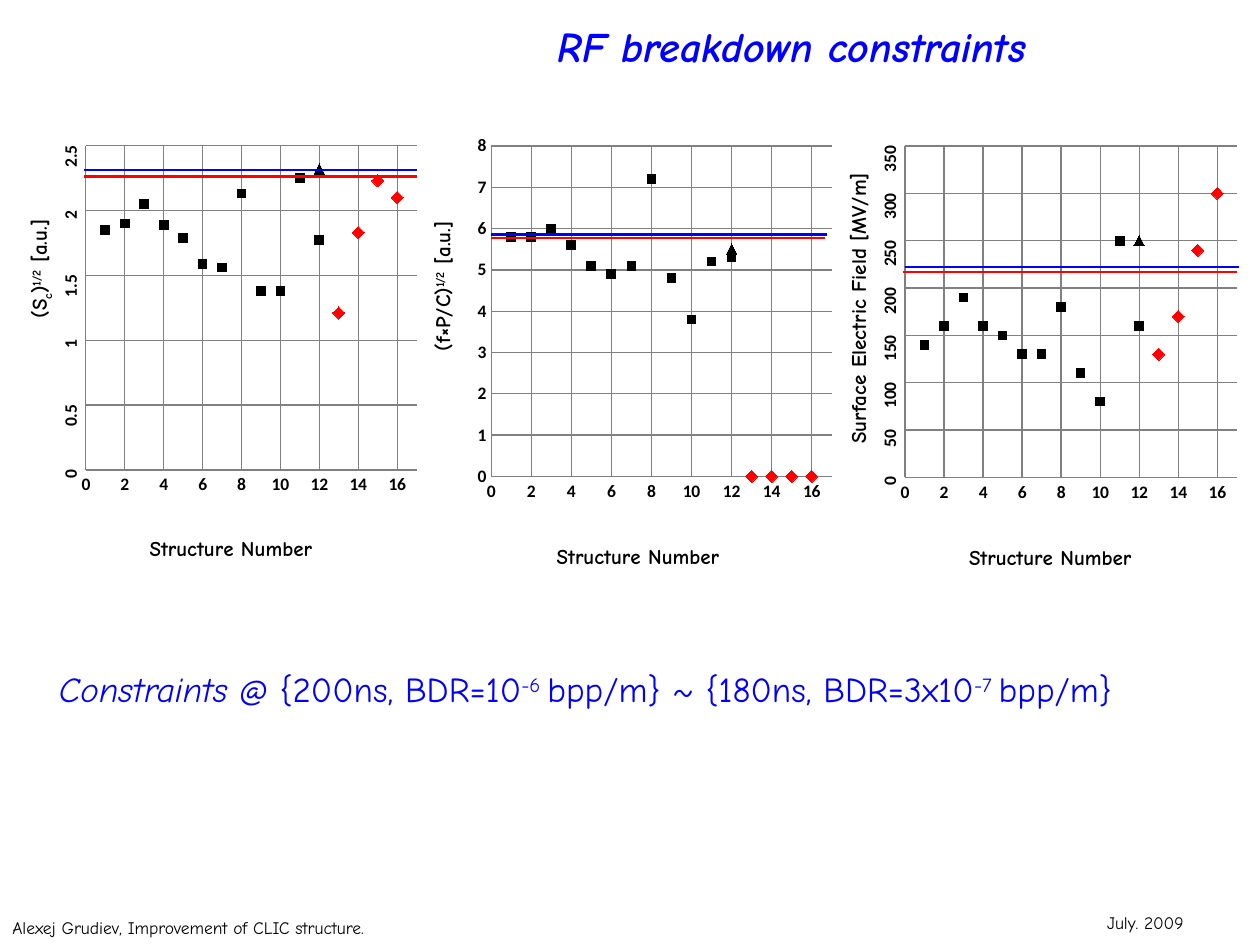
"""Build the slide on RF breakdown constraints with three scatter charts."""
from dataclasses import dataclass

from lxml.etree import SubElement
from pptx import Presentation
from pptx.chart.data import XyChartData
from pptx.dml.color import RGBColor
from pptx.enum.chart import XL_CHART_TYPE, XL_MARKER_STYLE, XL_TICK_MARK
from pptx.enum.shapes import MSO_CONNECTOR
from pptx.enum.text import MSO_ANCHOR, PP_ALIGN
from pptx.oxml import parse_xml
from pptx.oxml.ns import nsdecls, qn
from pptx.util import Inches, Pt


@dataclass(frozen=True)
class Theme:
    blue: RGBColor = RGBColor(0x00, 0x00, 0xFF)
    red: RGBColor = RGBColor(0xFF, 0x00, 0x00)
    black: RGBColor = RGBColor(0x00, 0x00, 0x00)
    grid: RGBColor = RGBColor(0x80, 0x80, 0x80)
    text_font: str = "Comic Neue"
    axis_font: str = "Calibri"
    title_size: int = 24
    body_size: int = 20
    axis_title_size: int = 12
    small_size: int = 10
    limit_width: float = 1.5
    grid_width: float = 0.75


THEME = Theme()
SUPERSCRIPT = 30
SUBSCRIPT = -25
STRUCTURES = [*range(1, 13), 12]
NEW_STRUCTURES = range(13, 17)


@dataclass(frozen=True)
class ScatterPanel:
    box: tuple
    title_runs: tuple
    title_top: float
    maximum: float
    step: float
    rotated_labels: bool
    tested: tuple
    new: tuple
    blue_limit: tuple
    red_limit: tuple


PANELS = (
    ScatterPanel(
        (0.11, 0.96, 3.38, 3.77),
        (("(S", 0), ("c", SUBSCRIPT), (")", 0), ("1/2", SUPERSCRIPT), (" [a.u.]", 0)),
        0.2, 2.5, 0.5, True,
        (1.85, 1.9, 2.05, 1.89, 1.79, 1.59, 1.56, 2.13, 1.38, 1.38, 2.25, 1.77, 2.32),
        (1.21, 1.83, 2.23, 2.1),
        (0.67, 3.31, 1.35), (0.67, 3.31, 1.4),
    ),
    ScatterPanel(
        (3.31, 0.96, 3.48, 3.84),
        (("(f×P/C)", 0), ("1/2", SUPERSCRIPT), (" [a.u.]", 0)),
        0.2, 8, 1, False,
        (5.8, 5.8, 6, 5.6, 5.1, 4.9, 5.1, 7.2, 4.8, 3.8, 5.2, 5.3, 5.5),
        (0, 0, 0, 0),
        (3.9, 6.56, 1.86), (3.9, 6.55, 1.89),
    ),
    ScatterPanel(
        (6.61, 0.96, 3.39, 3.85),
        (("Surface Electric Field [MV/m]", 0),),
        0.1, 350, 50, True,
        (140, 160, 190, 160, 150, 130, 130, 180, 110, 80, 250, 160, 250),
        (130, 170, 240, 300),
        (7.18, 9.83, 2.12), (7.17, 9.82, 2.16),
    ),
)


def style_font(font, size, color, name=THEME.text_font, bold=False, italic=False):
    """Set every visible property of a font."""
    font.name, font.size, font.bold, font.italic = name, Pt(size), bold, italic
    font.color.rgb = color


def add_run(paragraph, text, size, color, baseline=0, bold=False, italic=False):
    """Append one styled run, raised or lowered by a baseline percentage."""
    run = paragraph.add_run()
    run.text = text
    style_font(run.font, size, color, bold=bold, italic=italic)
    if baseline:
        run.font._element.set("baseline", str(baseline * 1000))


def add_text(slide, box, anchor=MSO_ANCHOR.TOP, alignment=PP_ALIGN.LEFT):
    """Add a text box and return its first paragraph."""
    frame = slide.shapes.add_textbox(*map(Inches, box)).text_frame
    frame.word_wrap = True
    frame.vertical_anchor = anchor
    paragraph = frame.paragraphs[0]
    paragraph.alignment = alignment
    return paragraph


def set_layout(parent, position, **values):
    """Give a chart element a manual layout at a position among its siblings."""
    for previous in parent.findall(qn("c:layout")):
        parent.remove(previous)
    layout = parse_xml(f"<c:layout {nsdecls('c')}><c:manualLayout/></c:layout>")
    for tag, value in values.items():
        SubElement(layout[0], qn(f"c:{tag}")).set("val", str(value))
    parent.insert(position, layout)


def style_axis(axis, maximum, step):
    """Set scale, grid, line and tick labels of an axis."""
    axis.minimum_scale, axis.maximum_scale, axis.major_unit = 0, maximum, step
    axis.major_tick_mark = axis.minor_tick_mark = XL_TICK_MARK.NONE
    axis.has_major_gridlines = True
    for line in (axis.format.line, axis.major_gridlines.format.line):
        line.color.rgb = THEME.grid
        line.width = Pt(THEME.grid_width)
    labels = axis.tick_labels
    labels.number_format, labels.number_format_is_linked = "General", False
    style_font(labels.font, THEME.small_size, THEME.black, THEME.axis_font, bold=True)


def add_axis_title(axis, runs, left, top):
    """Write an axis title and place it by chart fractions."""
    frame = axis.axis_title.text_frame
    for text, baseline in runs:
        add_run(frame.paragraphs[0], text, THEME.axis_title_size, THEME.black, baseline, bold=True)
    set_layout(axis.axis_title._element, 1, xMode="edge", yMode="edge", x=left, y=top)
    return frame


def rotate_upward(body):
    """Turn a chart text body to read from bottom to top."""
    properties = body.find(qn("a:bodyPr"))
    properties.set("rot", "-5400000")
    properties.set("vert", "horz")


def style_marker(marker, style, size, color):
    """Set form, size and colour of a marker."""
    marker.style, marker.size = style, size
    marker.format.fill.solid()
    marker.format.fill.fore_color.rgb = color
    marker.format.line.color.rgb = color


def add_scatter(slide, panel):
    """Add one scatter chart with its axes and markers."""
    data = XyChartData()
    for name, numbers, values in (
        ("Series 1", STRUCTURES, panel.tested),
        ("Series 2", NEW_STRUCTURES, panel.new),
    ):
        series = data.add_series(name)
        for number, value in zip(numbers, values):
            series.add_data_point(number, value)
    chart = slide.shapes.add_chart(XL_CHART_TYPE.XY_SCATTER, *map(Inches, panel.box), data).chart
    chart.has_title = chart.has_legend = False
    style_font(chart.font, THEME.small_size, THEME.black)
    plot = chart.plots[0]
    plot.vary_by_categories = False
    set_layout(chart._chartSpace.chart.plotArea, 0, layoutTarget="inner", xMode="edge",
               yMode="edge", x=0.169, y=0.052, w=0.777, h=0.683)
    style_axis(chart.category_axis, 17, 2)
    add_axis_title(chart.category_axis, (("Structure Number", 0),), 0.31, 0.865)
    style_axis(chart.value_axis, panel.maximum, panel.step)
    title_frame = add_axis_title(chart.value_axis, panel.title_runs, 0.02, panel.title_top)
    rotate_upward(title_frame._txBody)
    if panel.rotated_labels:
        rotate_upward(chart.value_axis._element.find(qn("c:txPr")))
    tested, new = plot.series
    style_marker(tested.marker, XL_MARKER_STYLE.SQUARE, 5, THEME.black)
    style_marker(new.marker, XL_MARKER_STYLE.DIAMOND, 7, THEME.red)
    last_point = tested.points[len(STRUCTURES) - 1]
    style_marker(last_point.marker, XL_MARKER_STYLE.TRIANGLE, 6, THEME.black)


def add_limit(slide, limit, color):
    """Draw a horizontal limit line without shadow."""
    left, right, height = map(Inches, limit)
    line = slide.shapes.add_connector(MSO_CONNECTOR.STRAIGHT, left, height, right, height)
    line.line.color.rgb = color
    line.line.width = Pt(THEME.limit_width)
    SubElement(line._element.spPr, qn("a:effectLst"))


def main():
    """Build and save the slide."""
    presentation = Presentation()
    presentation.slide_width, presentation.slide_height = Inches(10), Inches(7.5)
    slide = presentation.slides.add_slide(presentation.slide_layouts[6])
    date = add_text(slide, (8.18, 7.19, 1.82, 0.27), MSO_ANCHOR.MIDDLE, PP_ALIGN.CENTER)
    add_run(date, "July. 2009", THEME.small_size, THEME.black)
    footer = add_text(slide, (0, 7.23, 6.7, 0.27), MSO_ANCHOR.MIDDLE)
    add_run(footer, "Alexej Grudiev, Improvement of CLIC structure.", THEME.small_size, THEME.black)
    title = add_text(slide, (3.25, 0.1, 6.07, 0.51), MSO_ANCHOR.BOTTOM, PP_ALIGN.CENTER)
    add_run(title, "RF breakdown constraints", THEME.title_size, THEME.blue, bold=True, italic=True)
    for panel in PANELS:
        add_scatter(slide, panel)
    for panel in PANELS:
        add_limit(slide, panel.blue_limit, THEME.blue)
        add_limit(slide, panel.red_limit, THEME.red)
    constraints = add_text(slide, (0.37, 5.25, 9.3, 0.44))
    add_run(constraints, "Constraints @ ", THEME.body_size, THEME.blue, italic=True)
    for text, baseline in (("{200ns, BDR=10", 0), ("-6 ", SUPERSCRIPT),
                           ("bpp/m} ~ {180ns, BDR=3x10", 0), ("-7 ", SUPERSCRIPT), ("bpp/m}", 0)):
        add_run(constraints, text, THEME.body_size, THEME.blue, baseline)
    presentation.save("out.pptx")


if __name__ == "__main__":
    main()
